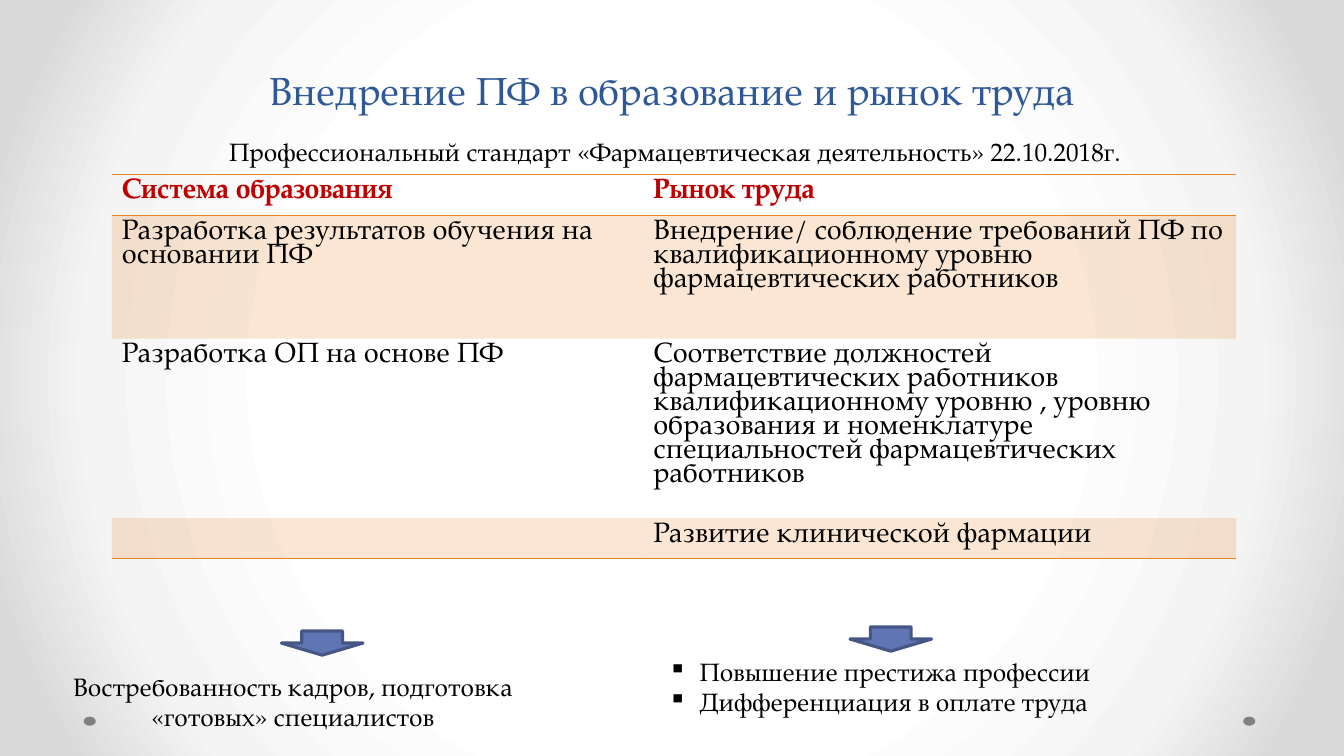
from pptx import Presentation
from pptx.dml.color import RGBColor as Rgb
from pptx.enum.shapes import MSO_SHAPE as Kind
from pptx.enum.text import MSO_ANCHOR as Anchor, MSO_AUTO_SIZE as Auto, PP_ALIGN as Align
from pptx.oxml import parse_xml
from pptx.oxml.ns import nsdecls, qn
from pptx.util import Inches, Pt

FONT = "TeX Gyre Pagella"
WIDE, HIGH = 13.33, 7.5
HUES = {"title": "2F5897", "head": "C00000", "text": "000000", "band": "E68422",
        "arrow": "6076B4", "edge": "475785", "dot": "808080"}
GLOW = {50: "FFFFFF", 76: "F4F4F4", 92: "DADADA"}
PLAIN = "{2D5ABB26-0587-4C30-8999-92F81FD0307C}"  # table style without grid
COLS = (5.27, 5.88)
ROWS = (0.41, 1.22, 1.78, 0.4)
CELLS = (
    ("Система образования", "Рынок труда"),
    ("Разработка результатов обучения на основании ПФ",
     "Внедрение/ соблюдение требований ПФ по квалификационному уровню "
     "фармацевтических работников"),
    ("Разработка ОП на основе ПФ",
     "Соответствие должностей фармацевтических работников квалификационному "
     "уровню , уровню образования и номенклатуре специальностей "
     "фармацевтических работников"),
    ("", "Развитие клинической фармации"),
)


def box(*sides):
    return [Inches(side) for side in sides]


def style(para, size, hue="text", align=Align.LEFT, bold=False):
    para.alignment = align
    font = para.font
    font.name, font.size, font.bold = FONT, Pt(size), bold
    font.color.rgb = Rgb.from_string(HUES[hue])


def add_glow(slide):
    stops = "".join(f'<a:gs pos="{pos}000"><a:srgbClr val="{hue}"/></a:gs>'
                    for pos, hue in GLOW.items())
    slide.element.cSld.insert(0, parse_xml(
        f'<p:bg {nsdecls("p", "a")}><p:bgPr><a:gradFill rotWithShape="1">'
        f'<a:gsLst>{stops}</a:gsLst><a:path path="circle"><a:fillToRect '
        'l="50000" t="50000" r="50000" b="50000"/></a:path></a:gradFill>'
        '<a:effectLst/></p:bgPr></p:bg>'))


def add_title(slide, text):
    title = slide.shapes.title
    title.left, title.top, title.width, title.height = box(0.67, 0, WIDE * 0.9, 1.18)
    frame = title.text_frame
    frame.text, frame.vertical_anchor = text, Anchor.BOTTOM
    para = frame.paragraphs[0]
    style(para, 28, "title", Align.CENTER)
    para.line_spacing = Pt(58)


def add_form(slide, kind, place, hue, edge=None):
    form = slide.shapes.add_shape(kind, *box(*place))
    form.shadow.inherit = False
    form.fill.solid()
    form.fill.fore_color.rgb = Rgb.from_string(HUES[hue])
    if edge:
        form.line.color.rgb = Rgb.from_string(HUES[edge])
        form.line.width = Pt(2.25)
    else:
        form.line.fill.background()


def add_note(slide, place, lines, align=Align.CENTER, bullet=None):
    frame = slide.shapes.add_textbox(*box(*place)).text_frame
    frame.word_wrap, frame.auto_size = True, Auto.SHAPE_TO_FIT_TEXT
    frame.text = "\n".join(lines)
    for para in frame.paragraphs:
        style(para, 18, align=align)
        if bullet:
            props = para._p.get_or_add_pPr()
            props.set("marL", str(Inches(0.31)))
            props.set("indent", str(-Inches(0.31)))
            props.append(parse_xml(f'<a:buChar {nsdecls("a")} char="{bullet}"/>'))


def add_rule(cell, side):
    cell._tc.get_or_add_tcPr().append(parse_xml(
        f'<a:{side} {nsdecls("a")} w="{Pt(1)}"><a:solidFill>'
        f'<a:srgbClr val="{HUES["band"]}"/></a:solidFill></a:{side}>'))


def fill_cell(cell, text, row):
    cell.text = text
    para = cell.text_frame.paragraphs[0]
    style(para, 20, "text" if row else "head", bold=row == 0)
    para.line_spacing = 0.85
    # Rules frame the header and close the table
    if row == 0:
        add_rule(cell, "lnT")
    if row in (0, len(ROWS) - 1):
        add_rule(cell, "lnB")
    # Every other row is tinted
    if row % 2:
        cell.fill.solid()
        cell.fill.fore_color.rgb = Rgb.from_string(HUES["band"])
        tint = cell._tc.tcPr.find(f'{qn("a:solidFill")}/{qn("a:srgbClr")}')
        tint.append(parse_xml(f'<a:alpha {nsdecls("a")} val="20000"/>'))
    else:
        cell.fill.background()


def add_grid(slide):
    frame = slide.shapes.add_table(len(ROWS), len(COLS),
                                   *box(1.11, 1.73, sum(COLS), sum(ROWS)))
    grid = frame.table
    grid.first_row = grid.horz_banding = False
    frame.element.find(f'.//{qn("a:tableStyleId")}').text = PLAIN
    for col, width in zip(grid.columns, COLS):
        col.width = Inches(width)
    for row, height in enumerate(ROWS):
        grid.rows[row].height = Inches(height)
        for col, text in enumerate(CELLS[row]):
            fill_cell(grid.cell(row, col), text, row)


def main():
    deck = Presentation()
    deck.slide_width, deck.slide_height = box(WIDE, HIGH)
    slide = deck.slides.add_slide(deck.slide_layouts[5])
    add_glow(slide)
    # Corner dots
    for left in (12.33, 0.83):
        add_form(slide, Kind.OVAL, (left, 7.11, 0.12, 0.09), "dot")
    # Heading and table
    add_title(slide, "Внедрение ПФ в образование и рынок труда")
    add_grid(slide)
    add_note(slide, (1.5, 1.3, 10.39, 0.4),
             ["Профессиональный стандарт «Фармацевтическая деятельность» 22.10.2018г."])
    # Outcomes below each column
    add_note(slide, (6.53, 6.46, 5.03, 0.71),
             ["Повышение престижа профессии", "Дифференциация в оплате труда"],
             Align.LEFT, "▪")
    for left, top in ((8.43, 6.22), (2.79, 6.26)):
        add_form(slide, Kind.DOWN_ARROW, (left, top, 0.81, 0.24), "arrow", "edge")
    add_note(slide, (0.43, 6.61, 4.95, 0.71),
             ["Востребованность кадров, подготовка «готовых» специалистов"])
    deck.save("out.pptx")


if __name__ == "__main__":
    main()
